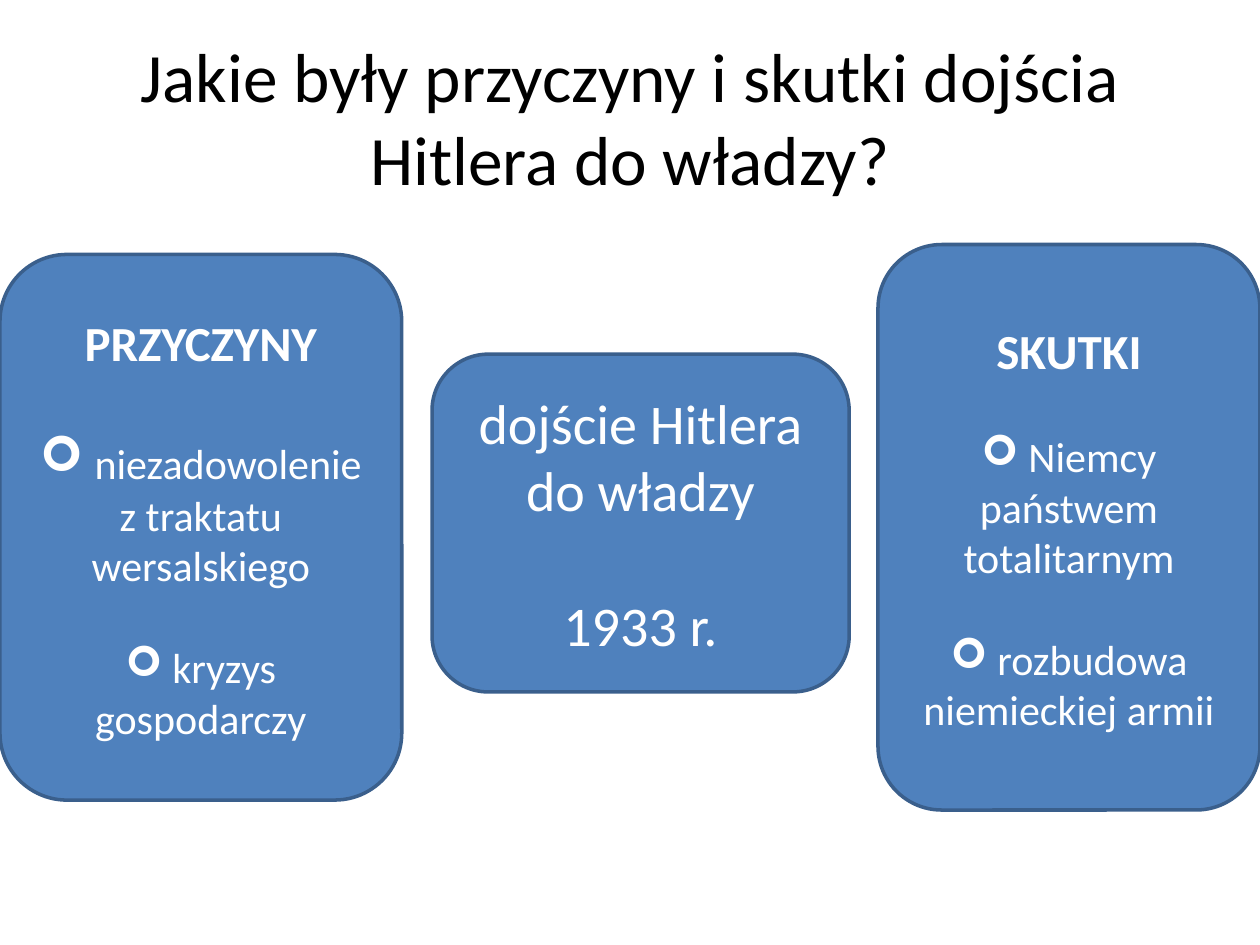
from lxml import etree
from pptx import Presentation
from pptx.dml.color import RGBColor
from pptx.enum.shapes import MSO_SHAPE
from pptx.enum.text import MSO_ANCHOR, PP_ALIGN
from pptx.oxml.ns import qn
from pptx.util import Cm, Pt

ROUNDED = MSO_SHAPE.ROUNDED_RECTANGLE
MIDDLE = MSO_ANCHOR.MIDDLE
CENTER = PP_ALIGN.CENTER
COLORS = {"panel": "4F81BD", "edge": "3A5F8C", "title": "000000", "text": "FFFFFF"}
LINE_HEIGHT = 1.22  # line pitch of Calibri relative to its size


def add_run(paragraph, text, color, **font_format):
    run = paragraph.add_run()
    run.text = text
    run.font.name = "Calibri"
    run.font.color.rgb = RGBColor.from_string(COLORS[color])
    for attribute, value in font_format.items():
        setattr(run.font, attribute, value)


def add_arrow_bullet(paragraph):
    properties = paragraph._p.get_or_add_pPr()
    etree.SubElement(properties, qn("a:buFont"), typeface="Wingdings")
    etree.SubElement(properties, qn("a:buChar"), char="➢")


presentation = Presentation()
presentation.slide_width, presentation.slide_height = Cm(25.4), Cm(19.05)
slide = presentation.slides.add_slide(presentation.slide_layouts[6])

title = slide.shapes.add_textbox(Cm(1.27), Cm(0.76), Cm(22.86), Cm(3.18))
title.text_frame.word_wrap = True
title.text_frame.vertical_anchor = MIDDLE
question = title.text_frame.paragraphs[0]
question.alignment = CENTER
add_run(question, "Jakie były przyczyny i skutki dojścia Hitlera do władzy?",
        "title", size=Pt(39.6))

# Each panel: left, top, width, height in cm, then its paragraphs as
# (text, size, bold, bullet size or None, size of the line skipped before).
panels = [
    ((0, 5.13, 8.1, 11), [
        ("PRZYCZYNY", 28, True, None, 0),
        ("niezadowolenie z traktatu wersalskiego", 24, False, 28, 28),
        ("kryzys gospodarczy", 24, False, 24, 24),
    ]),
    ((17.7, 4.93, 7.7, 11.4), [
        ("SKUTKI", 28, True, None, 0),
        ("Niemcy państwem totalitarnym", 24, False, 24, 24),
        ("rozbudowa niemieckiej armii", 24, False, 24, 24),
    ]),
    ((8.71, 7.14, 8.41, 6.81), [
        ("dojście Hitlera do władzy", 32, False, None, 0),
        ("1933 r.", 32, False, None, 32),
    ]),
]

for bounds, content in panels:
    panel = slide.shapes.add_shape(ROUNDED, *[Cm(length) for length in bounds])
    panel.shadow.inherit = False
    panel.fill.solid()
    panel.fill.fore_color.rgb = RGBColor.from_string(COLORS["panel"])
    panel.line.color.rgb = RGBColor.from_string(COLORS["edge"])
    panel.line.width = Pt(2)
    frame = panel.text_frame
    frame.word_wrap = True
    frame.vertical_anchor = MIDDLE

    for index, (text, size, bold, bullet_size, skipped) in enumerate(content):
        paragraph = frame.add_paragraph() if index else frame.paragraphs[0]
        paragraph.alignment = CENTER
        if skipped:
            paragraph.space_before = Pt(round(skipped * LINE_HEIGHT, 1))
        if bullet_size:
            add_arrow_bullet(paragraph)
            add_run(paragraph, " ", "text", size=Pt(bullet_size))
        add_run(paragraph, text, "text", size=Pt(size), bold=bold)

presentation.save("out.pptx")
